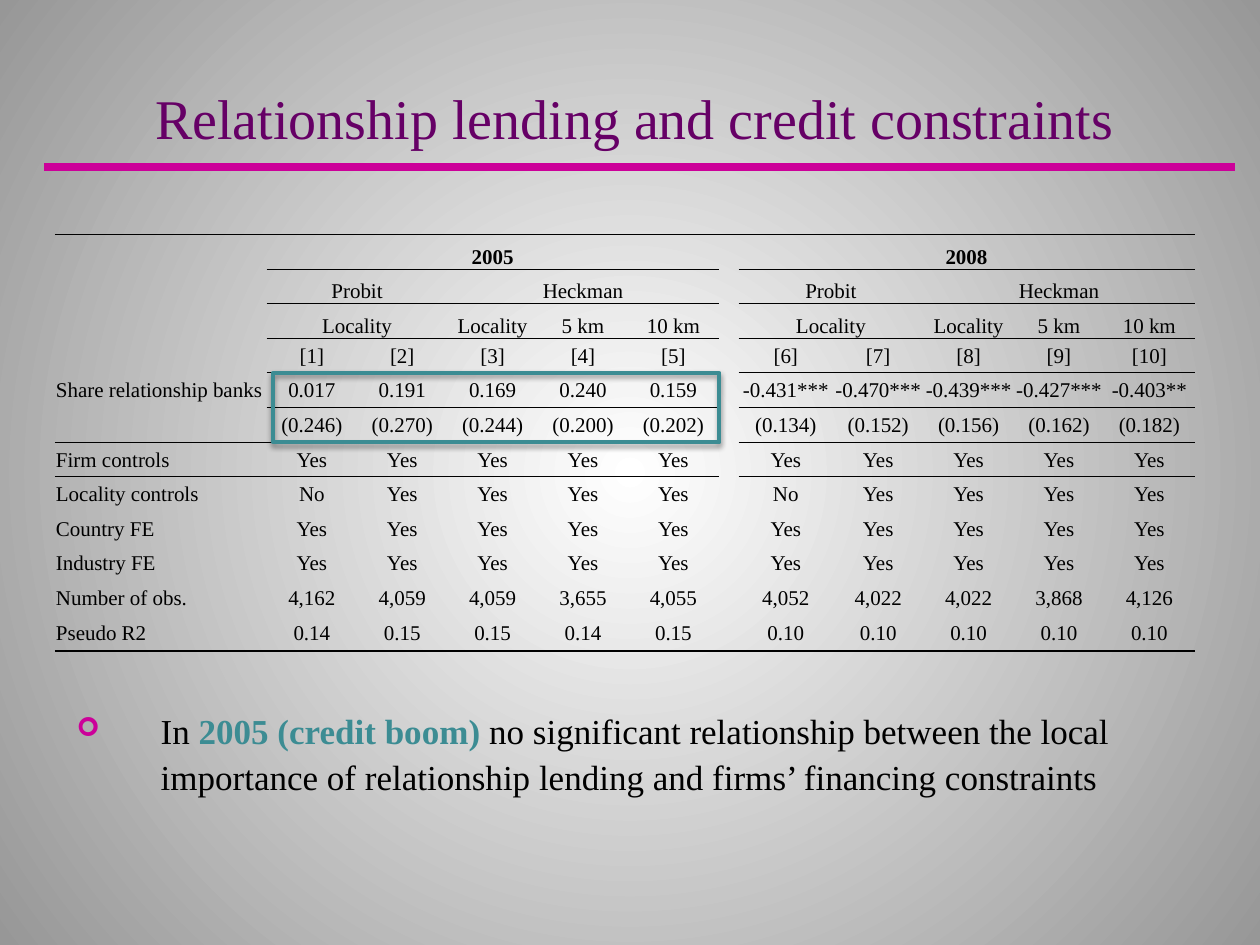
from dataclasses import dataclass
from lxml import etree
from pptx import Presentation
from pptx.dml.color import RGBColor
from pptx.enum import shapes, text
from pptx.oxml import parse_xml
from pptx.oxml.ns import nsdecls, qn
from pptx.util import Pt


@dataclass(frozen=True)
class Theme:
    font: str = "Times New Roman"
    ink: str = "000000"
    title: str = "660066"
    pink: str = "CC0099"
    teal: str = "3C8C93"
    light: str = "FFFFFF"
    dark: str = "979797"
    head: int = 32
    body: int = 20
    cell: int = 12
    thin: float = 0.5
    thick: float = 1


THEME = Theme()
PLAIN = "{2D5ABB26-0587-4C30-8999-92F81FD0307C}"
WIDE, GAP = 51.65, 11.4
COLS = [121.1] + [WIDE] * 5 + [GAP, 54] + [WIDE] * 4
ROWS = [19.8] * 11 + [20.5]
GROUPS = (1, 7)
SPANS = {0: [(0, 4)], 1: [(0, 1), (2, 4)], 2: [(0, 1)]}
YES = ["Yes"] * 5
NO = ["No"] + YES[1:]
KINDS = ["Probit", "", "Heckman", "", ""]
AREAS = ["Locality", "", "Locality", "5 km", "10 km"]
DATA = [
    ("", ["2005"] + [""] * 4, ["2008"] + [""] * 4),
    ("", KINDS, KINDS),
    ("", AREAS, AREAS),
    ("", [f"[{n}]" for n in range(1, 6)], [f"[{n}]" for n in range(6, 11)]),
    ("Share relationship banks", ["0.017", "0.191", "0.169", "0.240", "0.159"],
     ["-0.431***", "-0.470***", "-0.439***", "-0.427***", "-0.403**"]),
    ("", ["(0.246)", "(0.270)", "(0.244)", "(0.200)", "(0.202)"],
     ["(0.134)", "(0.152)", "(0.156)", "(0.162)", "(0.182)"]),
    ("Firm controls", YES, YES),
    ("Locality controls", NO, NO),
    ("Country FE", YES, YES),
    ("Industry FE", YES, YES),
    ("Number of obs.", ["4,162", "4,059", "4,059", "3,655", "4,055"],
     ["4,052", "4,022", "4,022", "3,868", "4,126"]),
    ("Pseudo R2", ["0.14", "0.15", "0.15", "0.14", "0.15"], ["0.10"] * 5),
]
POINT = [
    ("In ", False),
    ("2005 (credit boom) ", True),
    ("no significant relationship between the local importance of "
     "relationship lending and firms’ financing constraints", False),
]


def style(run, size, color, bold=False):
    run.font.name = THEME.font
    run.font.size = Pt(size)
    run.font.bold = bold
    run.font.color.rgb = RGBColor.from_string(color)


def paint(slide):
    fill = slide.background.fill
    fill.gradient()
    grad = slide.background._cSld.find(".//" + qn("a:gradFill"))
    new = parse_xml(
        f'<a:gradFill {nsdecls("a")} rotWithShape="1"><a:gsLst>'
        f'<a:gs pos="0"><a:srgbClr val="{THEME.light}"/></a:gs>'
        f'<a:gs pos="100000"><a:srgbClr val="{THEME.dark}"/></a:gs></a:gsLst>'
        '<a:path path="circle"><a:fillToRect l="50000" t="50000" r="50000" '
        'b="50000"/></a:path></a:gradFill>')
    grad.getparent().replace(grad, new)


def add_title(slide, x, y, w, h):
    title = slide.shapes.title
    title.left, title.top, title.width, title.height = map(Pt, (x, y, w, h))
    frame = title.text_frame
    frame.text = "Relationship lending and credit constraints"
    frame.vertical_anchor = text.MSO_ANCHOR.BOTTOM
    para = frame.paragraphs[0]
    para.alignment = text.PP_ALIGN.CENTER
    style(para.runs[0], THEME.head, THEME.title)


def add_rule(slide, x, y, w):
    line = slide.shapes.add_connector(
        shapes.MSO_CONNECTOR.STRAIGHT, Pt(x), Pt(y), Pt(x + w), Pt(y))
    line.line.color.rgb = RGBColor.from_string(THEME.pink)
    line.line.width = Pt(4.5)
    etree.SubElement(line._element.spPr, qn("a:effectLst"))


def base(row, col):
    if row == len(ROWS) - 1:
        return THEME.thick
    grouped = col not in (0, 6)
    if row < 4 and grouped or row == 5 and col != 6:
        return THEME.thin
    return 0


def edge(cell, row, col):
    top = base(row - 1, col) if row else THEME.thick
    props = cell._tc.get_or_add_tcPr()
    sides = [(tag, size) for tag, size in
             (("lnT", top), ("lnB", base(row, col))) if size]
    for spot, (tag, size) in enumerate(sides):
        props.insert(spot, parse_xml(
            f'<a:{tag} {nsdecls("a")} w="{Pt(size)}"><a:solidFill>'
            f'<a:srgbClr val="{THEME.ink}"/></a:solidFill></a:{tag}>'))


def fill_cell(cell, word, row, col):
    cell.fill.background()
    cell.margin_left = cell.margin_right = cell.margin_top = Pt(0.7)
    cell.margin_bottom = 0
    anchor = text.MSO_ANCHOR
    cell.vertical_anchor = anchor.BOTTOM if row < 3 else anchor.MIDDLE
    para = cell.text_frame.paragraphs[0]
    para.alignment = text.PP_ALIGN.CENTER if col else text.PP_ALIGN.LEFT
    if word:
        para.text = word
        style(para.runs[0], THEME.cell, THEME.ink, row == 0)
    else:
        etree.SubElement(para._p, qn("a:endParaRPr"), sz=str(THEME.cell * 100))
    edge(cell, row, col)


def add_grid(slide, x, y):
    frame = slide.shapes.add_table(
        len(ROWS), len(COLS), Pt(x), Pt(y), Pt(sum(COLS)), Pt(sum(ROWS)))
    grid = frame.table
    grid.first_row = grid.horz_banding = False
    grid._tbl.tblPr.find(qn("a:tableStyleId")).text = PLAIN
    for col, size in zip(grid.columns, COLS):
        col.width = Pt(size)
    for row, size in zip(grid.rows, ROWS):
        row.height = Pt(size)
    for row, (label, left, right) in enumerate(DATA):
        for col, word in enumerate([label, *left, "", *right]):
            fill_cell(grid.cell(row, col), word, row, col)
    for row, spans in SPANS.items():
        for start in GROUPS:
            for a, b in spans:
                grid.cell(row, start + a).merge(grid.cell(row, start + b))


def add_point(slide, x, y, w, h):
    frame = slide.shapes.add_textbox(Pt(x), Pt(y), Pt(w), Pt(h)).text_frame
    frame.word_wrap = True
    para = frame.paragraphs[0]
    para.line_spacing = 1.1
    for words, bold in POINT:
        run = para.add_run()
        run.text = words
        style(run, THEME.body, THEME.teal if bold else THEME.ink, bold)
    props = para._p.get_or_add_pPr()
    props.set("marL", str(Pt(48)))
    props.set("indent", str(Pt(-48)))
    color = etree.SubElement(props, qn("a:buClr"))
    etree.SubElement(color, qn("a:srgbClr"), val=THEME.pink)
    etree.SubElement(props, qn("a:buSzPct"), val="75000")
    etree.SubElement(props, qn("a:buFont"), typeface="Wingdings")
    etree.SubElement(props, qn("a:buChar"), char="➢")


def add_mark(slide, x, y, w, h):
    box = slide.shapes.add_shape(
        shapes.MSO_SHAPE.RECTANGLE, Pt(x), Pt(y), Pt(w), Pt(h))
    box.fill.background()
    box.line.color.rgb = RGBColor.from_string(THEME.teal)
    box.line.width = Pt(2.5)
    box.shadow.inherit = False
    glow = box._element.spPr.find(qn("a:effectLst"))
    glow.append(parse_xml(
        f'<a:outerShdw {nsdecls("a")} blurRad="{Pt(3.1)}" dist="{Pt(1.8)}" '
        f'dir="5400000" rotWithShape="0"><a:srgbClr val="{THEME.ink}">'
        '<a:alpha val="35000"/></a:srgbClr></a:outerShdw>'))


def main():
    deck = Presentation()
    deck.slide_width, deck.slide_height = Pt(720), Pt(540)
    slide = deck.slides.add_slide(deck.slide_layouts[5])
    paint(slide)
    add_grid(slide, 31.3, 133.9)
    add_title(slide, 23.8, 18, 678, 72)
    add_point(slide, 36.7, 399.5, 660, 62)
    add_rule(slide, 25.2, 95.6, 680.4)
    add_mark(slide, 156.2, 213.1, 254.9, 39.6)
    deck.save("out.pptx")


if __name__ == "__main__":
    main()
